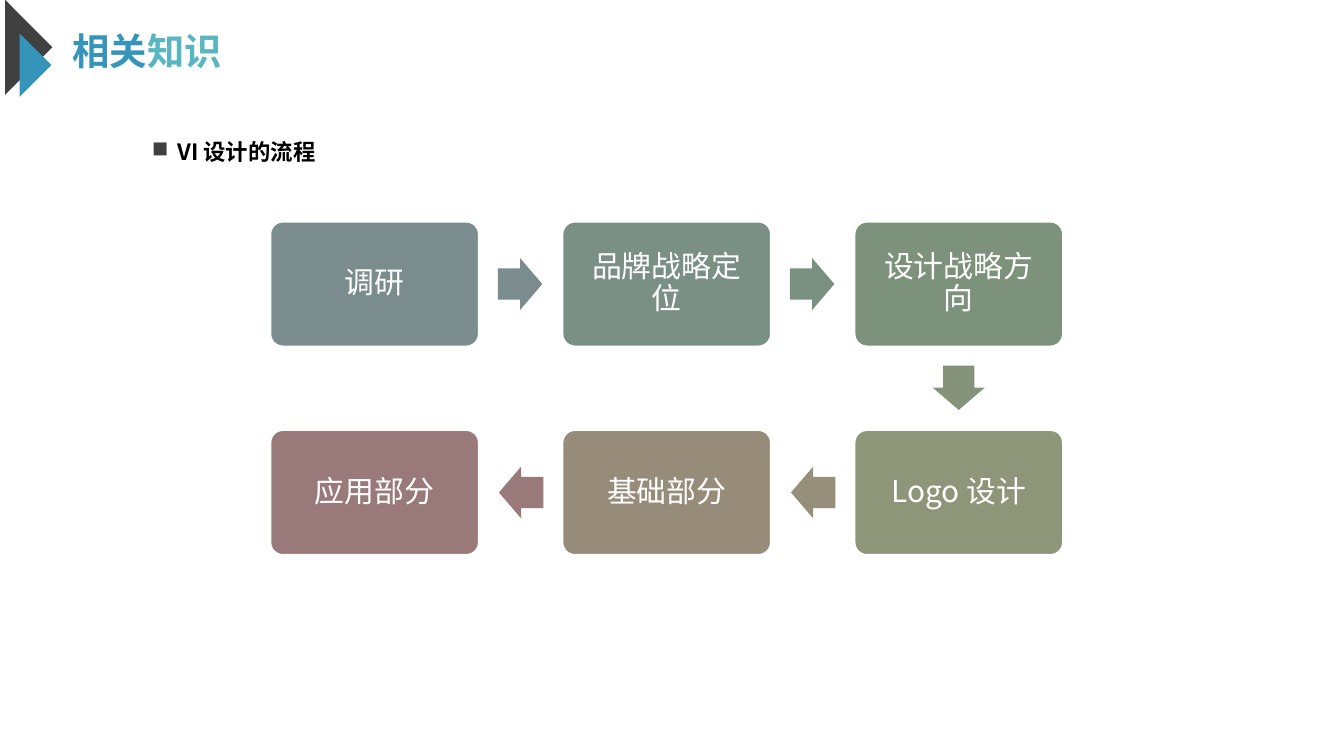
from lxml import etree
from pptx import Presentation
from pptx import util as u
from pptx.dml.color import RGBColor
from pptx.enum import shapes, text
from pptx.oxml.ns import qn

FONT = "Noto Sans CJK SC"
BOX_WIDTH, BOX_HEIGHT = 3.94, 2.36
LEFT, TOP = 5.11, 4.19
COLUMN_STEP, ROW_STEP = 5.52, 3.94
ARROW_LENGTH, ARROW_BREADTH, ARROW_GAP = 0.84, 0.98, 0.36

STEPS = [
    ("调研", 0, 0, "7A8C8E"),
    ("品牌战略定位", 1, 0, "7A9085"),
    ("设计战略方向", 2, 0, "7D927A"),
    ("Logo 设计", 2, 1, "8E9579"),
    ("基础部分", 1, 1, "978B79"),
    ("应用部分", 0, 1, "99797A"),
]
ARROW_COLORS = ["7A8C8E", "7A9181", "85937A", "968F79", "99797A"]
ARROW_KINDS = {
    (1, 0): shapes.MSO_SHAPE.RIGHT_ARROW,
    (-1, 0): shapes.MSO_SHAPE.LEFT_ARROW,
    (0, 1): shapes.MSO_SHAPE.DOWN_ARROW,
}


def color(value):
    """Return the colour for a hex string."""
    return RGBColor.from_string(value)


def paint(shape, fill, line=None):
    """Give a shape a flat fill and an optional outline."""
    shape.shadow.inherit = False
    shape.fill.solid()
    shape.fill.fore_color.rgb = color(fill)
    if line:
        shape.line.color.rgb = color(line)
        shape.line.width = u.Pt(1)
    else:
        shape.line.fill.background()


def set_font(paragraph, size, name=FONT, bold=False, fill=None):
    """Set the font of a whole paragraph, Chinese text included."""
    font = paragraph.font
    font.size, font.name, font.bold = u.Pt(size), name, bold
    if fill:
        font.color.rgb = color(fill)
    properties = paragraph._p.pPr.find(qn("a:defRPr"))
    etree.SubElement(properties, qn("a:ea"), typeface=FONT)


def set_margins(frame, margin):
    """Set all four text margins."""
    frame.margin_left = frame.margin_right = u.Cm(margin)
    frame.margin_top = frame.margin_bottom = u.Cm(margin)


def add_text_box(slide, left, top, width, height, wrap):
    """Add a text box without margins and return its first paragraph."""
    box = slide.shapes.add_textbox(u.Cm(left), u.Cm(top), u.Cm(width), u.Cm(height))
    frame = box.text_frame
    set_margins(frame, 0)
    frame.word_wrap = wrap
    frame.auto_size = text.MSO_AUTO_SIZE.SHAPE_TO_FIT_TEXT
    return frame.paragraphs[0]


def add_triangle(slide, left, top, width, height, fill):
    """Add a triangle that points right."""
    builder = slide.shapes.build_freeform(u.Cm(left), u.Cm(top))
    builder.add_line_segments([
        (u.Cm(left + width), u.Cm(top + height / 2)),
        (u.Cm(left), u.Cm(top + height)),
    ])
    paint(builder.convert_to_shape(), fill)


def add_title(slide):
    """Add the two-colour title."""
    paragraph = add_text_box(slide, 1.37, 0.53, 2.84, 0.86, False)
    set_font(paragraph, 20, "Arial Narrow", True)
    for wording, fill in (("相关", "3494BA"), ("知识", "58B6C0")):
        run = paragraph.add_run()
        run.text = wording
        run.font.color.rgb = color(fill)


def add_bullet_heading(slide, wording):
    """Add the heading with a square bullet."""
    paragraph = add_text_box(slide, 2.87, 2.36, 5.26, 0.69, True)
    paragraph.text = wording
    paragraph.alignment = text.PP_ALIGN.JUSTIFY
    paragraph.line_spacing = 1.5
    properties = paragraph._p.get_or_add_pPr()
    indent = u.Cm(0.48)
    properties.set("marL", str(indent))
    properties.set("indent", str(-indent))
    bullet_color = etree.SubElement(properties, qn("a:buClr"))
    etree.SubElement(bullet_color, qn("a:srgbClr"), val="404040")
    etree.SubElement(properties, qn("a:buChar"), char="■")
    set_font(paragraph, 12, bold=True, fill="000000")


def add_step(slide, wording, column, row, fill):
    """Add one rounded step box at its place in the grid."""
    shape = slide.shapes.add_shape(
        shapes.MSO_SHAPE.ROUNDED_RECTANGLE,
        u.Cm(LEFT + column * COLUMN_STEP), u.Cm(TOP + row * ROW_STEP),
        u.Cm(BOX_WIDTH), u.Cm(BOX_HEIGHT))
    shape.adjustments[0] = 0.1
    paint(shape, fill, "FFFFFF")
    frame = shape.text_frame
    set_margins(frame, 0.23)
    frame.word_wrap = True
    frame.vertical_anchor = text.MSO_ANCHOR.MIDDLE
    paragraph = frame.paragraphs[0]
    paragraph.text = wording
    paragraph.alignment = text.PP_ALIGN.CENTER
    paragraph.line_spacing = 0.9
    paragraph.space_after = u.Pt(5.6)
    set_font(paragraph, 16, fill="FFFFFF")


def add_arrow(slide, column, row, direction, fill):
    """Add an arrow that leaves a grid cell in the given direction."""
    across, down = direction
    width, height = (ARROW_LENGTH, ARROW_BREADTH) if across else (ARROW_BREADTH, ARROW_LENGTH)
    center_x = LEFT + column * COLUMN_STEP + BOX_WIDTH / 2
    center_y = TOP + row * ROW_STEP + BOX_HEIGHT / 2
    center_x += across * (BOX_WIDTH / 2 + ARROW_GAP + width / 2)
    center_y += down * (BOX_HEIGHT / 2 + ARROW_GAP + height / 2)
    shape = slide.shapes.add_shape(
        ARROW_KINDS[direction], u.Cm(center_x - width / 2), u.Cm(center_y - height / 2),
        u.Cm(width), u.Cm(height))
    shape.adjustments[0] = 0.6
    shape.adjustments[1] = 0.5
    paint(shape, fill)


def main():
    """Build and save the slide."""
    presentation = Presentation()
    presentation.slide_width, presentation.slide_height = u.Cm(25.4), u.Cm(14.29)
    slide = presentation.slides.add_slide(presentation.slide_layouts[6])
    add_triangle(slide, 0.1, 0, 0.89, 1.79, "404040")
    add_triangle(slide, 0.37, 0.63, 0.6, 1.2, "3494BA")
    add_title(slide)
    add_bullet_heading(slide, "VI 设计的流程")
    for step in STEPS:
        add_step(slide, *step)
    for start, end, fill in zip(STEPS, STEPS[1:], ARROW_COLORS):
        column, row = start[1:3]
        add_arrow(slide, column, row, (end[1] - column, end[2] - row), fill)
    presentation.save("out.pptx")


if __name__ == "__main__":
    main()
